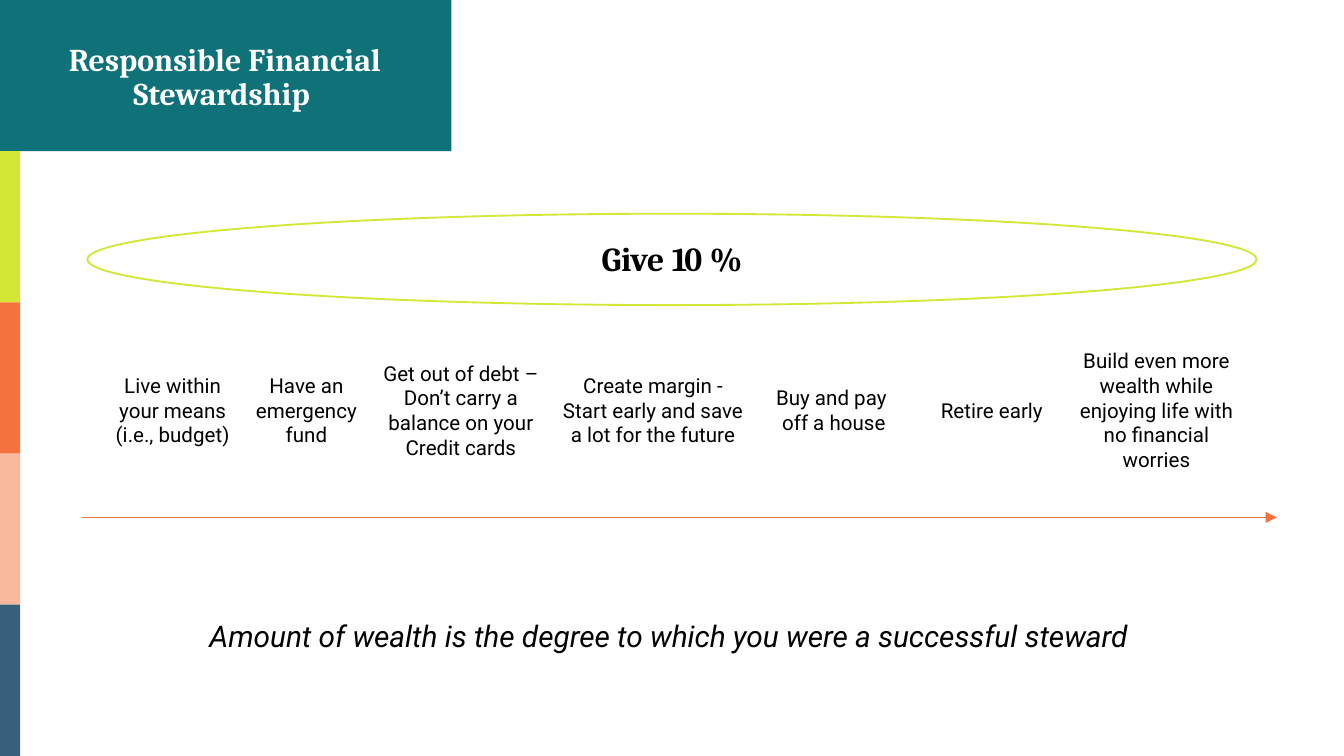
from dataclasses import dataclass

from lxml.etree import SubElement
from pptx import Presentation
from pptx.dml.color import RGBColor
from pptx.enum.shapes import MSO_CONNECTOR, MSO_SHAPE
from pptx.enum.text import MSO_ANCHOR, PP_ALIGN
from pptx.oxml.ns import qn
from pptx.util import Inches, Pt


@dataclass(frozen=True)
class Theme:
    teal: str = "0F7278"
    lime: str = "D3E736"
    orange: str = "F3723D"
    peach: str = "FAB89D"
    navy: str = "385F7C"
    arrow: str = "F3713E"
    black: str = "000000"
    white: str = "FFFFFF"
    heading_font: str = "Cambria"
    body_font: str = "Roboto"
    title_size: int = 17
    give_size: int = 18
    step_size: int = 11
    closing_size: int = 16


THEME = Theme()
WIDTH = 10
HEIGHT = WIDTH * 9 / 16
BAND = HEIGHT / 5
STEPS = [
    (0.66, 1.25, "Live within your means (i.e., budget)"),
    (1.77, 1.02, "Have an emergency fund"),
    (2.65, 1.56, "Get out of debt – Don’t carry a balance on your Credit cards"),
    (4.08, 1.56, "Create margin - Start early and save a lot for the future"),
    (5.51, 1.39, "Buy and pay \noff a house"),
    (6.77, 1.22, "Retire early"),
    (7.85, 1.51, "Build even more wealth while enjoying life with no financial worries"),
]


def rgb(color):
    return RGBColor.from_string(color)


def style_text(tf, size, font, color=THEME.black, bold=False, italic=False):
    for p in tf.paragraphs:
        p.alignment = PP_ALIGN.CENTER
        for r in p.runs:
            r.font.name = font
            r.font.size = Pt(size)
            r.font.bold = bold
            r.font.italic = italic
            r.font.color.rgb = rgb(color)


def add_block(s, x, y, w, h, color):
    sp = s.shapes.add_shape(MSO_SHAPE.RECTANGLE, Inches(x), Inches(y), Inches(w), Inches(h))
    sp.shadow.inherit = False
    sp.fill.solid()
    sp.fill.fore_color.rgb = rgb(color)
    sp.line.fill.background()


def add_text(s, x, y, w, h, text, wrap=True, anchor=MSO_ANCHOR.TOP):
    sp = s.shapes.add_textbox(Inches(x), Inches(y), Inches(w), Inches(h))
    tf = sp.text_frame
    tf.word_wrap = wrap
    tf.vertical_anchor = anchor
    tf.text = text
    return tf


def add_side_bands(s):
    add_block(s, 0, 0, 3.36, BAND, THEME.teal)
    for i, color in enumerate([THEME.lime, THEME.orange, THEME.peach, THEME.navy], 1):
        add_block(s, 0, i * BAND, 0.15, BAND, color)


def add_title(s, text):
    sp = s.shapes.title
    s.shapes.element.append(sp.element)
    sp.left, sp.top, sp.width, sp.height = (Inches(v) for v in (0.2, 0.13, 2.95, 0.9))
    tf = sp.text_frame
    tf.text = text
    tf.word_wrap = True
    tf.vertical_anchor = MSO_ANCHOR.MIDDLE
    p = tf.paragraphs[0]
    p.line_spacing = 0.9
    p.space_before = Pt(0)
    style_text(tf, THEME.title_size, THEME.heading_font, THEME.white, bold=True)


def add_giving(s):
    tf = add_text(s, 4.33, 1.72, 1.34, 0.4, "Give ", wrap=False)
    p = tf.paragraphs[0]
    for text, spacing in [("10", "-150"), (" %", "0")]:
        r = p.add_run()
        r.text = text
        r.font._element.set("spc", spacing)
    style_text(tf, THEME.give_size, THEME.heading_font, bold=True)
    sp = s.shapes.add_shape(MSO_SHAPE.OVAL, Inches(0.65), Inches(1.59), Inches(8.7), Inches(0.68))
    sp.shadow.inherit = False
    sp.fill.background()
    sp.line.color.rgb = rgb(THEME.lime)
    sp.line.width = Pt(1)


def add_steps(s):
    for x, w, text in STEPS:
        tf = add_text(s, x, 2.63, w, 0.84, text, anchor=MSO_ANCHOR.MIDDLE)
        style_text(tf, THEME.step_size, THEME.body_font)


def add_arrow(s, x1, x2, y):
    line = s.shapes.add_connector(MSO_CONNECTOR.STRAIGHT, Inches(x1), Inches(y), Inches(x2), Inches(y))
    line.line.color.rgb = rgb(THEME.arrow)
    line.line.width = Pt(0.5)
    SubElement(line.line._get_or_add_ln(), qn("a:tailEnd"), type="triangle")
    SubElement(line.element.spPr, qn("a:effectLst"))


def main():
    prs = Presentation()
    prs.slide_width, prs.slide_height = Inches(WIDTH), Inches(HEIGHT)
    s = prs.slides.add_slide(prs.slide_layouts[5])
    add_side_bands(s)
    add_title(s, "Responsible Financial Stewardship ")
    add_steps(s)
    tf = add_text(s, 1.21, 4.55, 7.59, 0.67,
                  "Amount of wealth is the degree to which you were a successful steward ", wrap=False)
    style_text(tf, THEME.closing_size, THEME.body_font, italic=True)
    add_giving(s)
    add_arrow(s, 0.61, 9.5, 3.85)
    prs.save("out.pptx")


if __name__ == "__main__":
    main()
